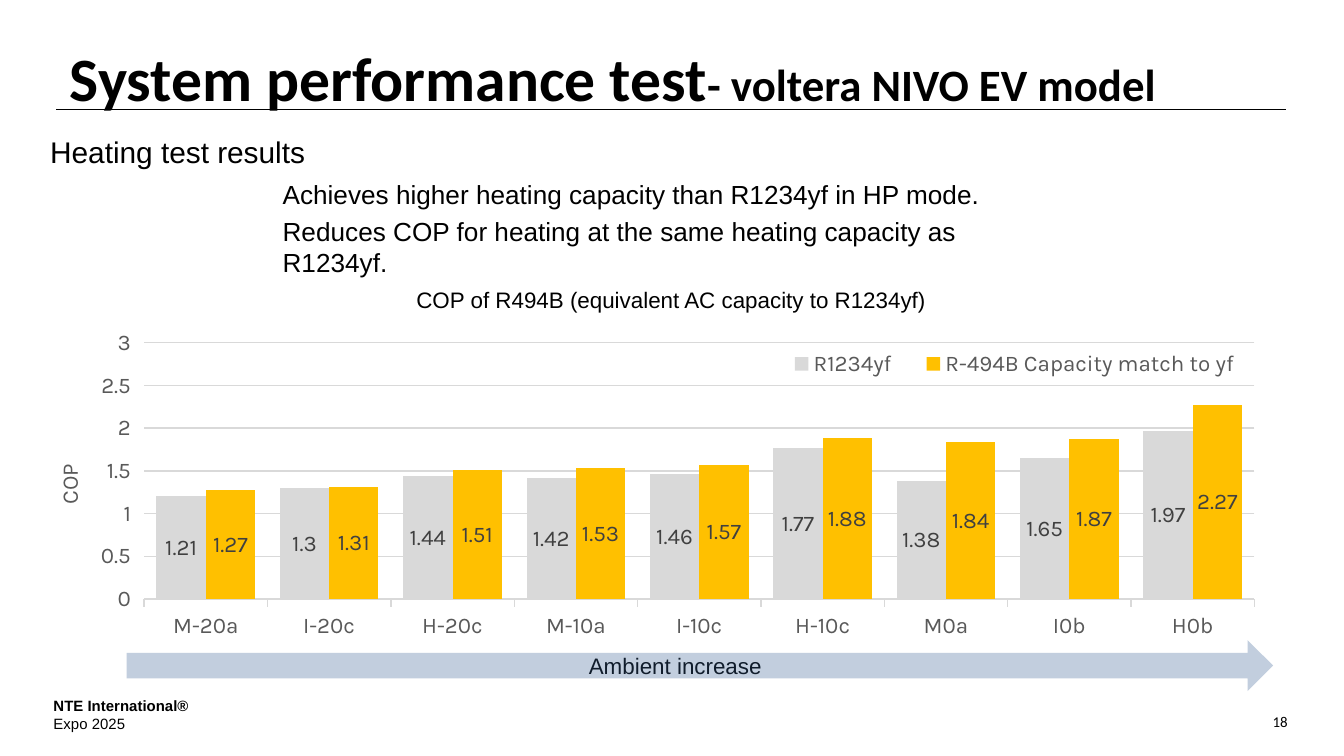
from dataclasses import dataclass

import lxml.etree
import pptx
import pptx.chart.data
import pptx.dml.color
import pptx.enum.chart
import pptx.enum.shapes
import pptx.enum.text
import pptx.oxml.ns
import pptx.util

Pt = pptx.util.Pt
RGBColor = pptx.dml.color.RGBColor
Align = pptx.enum.text.PP_ALIGN
Anchor = pptx.enum.text.MSO_ANCHOR
qn = pptx.oxml.ns.qn

BLACK = RGBColor(0x00, 0x00, 0x00)
AXIS_GRAY = RGBColor(0x59, 0x59, 0x59)
LABEL_GRAY = RGBColor(0x40, 0x40, 0x40)
LIGHT_GRAY = RGBColor(0xD9, 0xD9, 0xD9)
AMBER = RGBColor(0xFF, 0xC0, 0x00)
ARROW_BLUE = RGBColor(0x37, 0x60, 0x92)


@dataclass
class Box:
    left: float
    top: float
    width: float
    height: float

    def emu(self) -> list:
        return [Pt(v) for v in (self.left, self.top, self.width, self.height)]


@dataclass
class Label:
    box: Box
    lines: list
    size: float
    font: str = "Arial"
    align: Align = Align.LEFT
    anchor: Anchor = Anchor.TOP
    inset: bool = True
    after: float = 0


@dataclass
class Series:
    name: str
    color: RGBColor
    values: tuple


def style_font(font, size: float, color: RGBColor, name: str, bold: bool = False) -> None:
    font.size, font.name, font.bold = Pt(size), name, bold
    font.color.rgb = color


def fill_text(shape, label: Label) -> None:
    frame = shape.text_frame
    frame.text = "\n".join(label.lines)
    frame.word_wrap = True
    frame.auto_size = pptx.enum.text.MSO_AUTO_SIZE.NONE
    frame.vertical_anchor = label.anchor
    if not label.inset:
        frame.margin_left = frame.margin_right = frame.margin_top = frame.margin_bottom = 0
    for paragraph in frame.paragraphs:
        paragraph.alignment = label.align
        paragraph.space_before, paragraph.space_after = Pt(0), Pt(label.after)
        for run in paragraph.runs:
            style_font(run.font, label.size, BLACK, label.font)


def add_label(slide, label: Label):
    shape = slide.shapes.add_textbox(*label.box.emu())
    fill_text(shape, label)
    return shape


def move(shape, box: Box) -> None:
    shape.left, shape.top, shape.width, shape.height = box.emu()


def set_layout(parent, index: int, inner: bool, **fractions: float) -> None:
    """Place a chart part by fractions of the chart area."""
    for old in parent.findall(qn("c:layout")):
        parent.remove(old)
    layout = lxml.etree.Element(qn("c:layout"))
    manual = lxml.etree.SubElement(layout, qn("c:manualLayout"))
    settings = {"layoutTarget": "inner"} if inner else {}
    settings.update(xMode="edge", yMode="edge", **fractions)
    for key, value in settings.items():
        lxml.etree.SubElement(manual, qn(f"c:{key}")).set("val", str(value))
    parent.insert(index, layout)


def add_cop_chart(slide, box: Box, categories: list, series: list) -> None:
    data = pptx.chart.data.CategoryChartData()
    data.categories = categories
    for entry in series:
        data.add_series(entry.name, entry.values)
    kind = pptx.enum.chart.XL_CHART_TYPE.COLUMN_CLUSTERED
    chart = slide.shapes.add_chart(kind, *box.emu(), data).chart
    chart.has_title = False
    style_font(chart.font, 12, BLACK, "Karla")

    # Columns with centred values
    plot = chart.plots[0]
    plot.gap_width, plot.overlap, plot.vary_by_categories = 50, 0, False
    for column, entry in zip(plot.series, series):
        column.format.fill.solid()
        column.format.fill.fore_color.rgb = entry.color
        values = column.data_labels
        values.show_value = True
        values.position = pptx.enum.chart.XL_LABEL_POSITION.CENTER
        style_font(values.font, 12, LABEL_GRAY, "Karla")

    # Axes
    for axis in (chart.category_axis, chart.value_axis):
        style_font(axis.tick_labels.font, 12, AXIS_GRAY, "Karla")
        axis.major_tick_mark = pptx.enum.chart.XL_TICK_MARK.OUTSIDE
    cop_axis = chart.value_axis
    cop_axis.minimum_scale, cop_axis.maximum_scale, cop_axis.major_unit = 0, 3, 0.5
    cop_axis.format.line.fill.background()
    for line in (chart.category_axis.format.line, cop_axis.major_gridlines.format.line):
        line.color.rgb, line.width = LIGHT_GRAY, Pt(0.75)
    cop_title = cop_axis.axis_title.text_frame
    cop_title.text = "COP"
    style_font(cop_title.paragraphs[0].runs[0].font, 12, AXIS_GRAY, "Karla")

    # Legend inside the plot, top right
    chart.has_legend = True
    chart.legend.position = pptx.enum.chart.XL_LEGEND_POSITION.TOP
    chart.legend.include_in_layout = True
    style_font(chart.legend.font, 12, AXIS_GRAY, "Karla")
    area = chart.element.find(".//" + qn("c:plotArea"))
    set_layout(area, 0, True, x=0.076, y=0.099, w=0.898, h=0.681)
    legend = chart.element.find(".//" + qn("c:legend"))
    set_layout(legend, 1, False, x=0.58, y=0.11, w=0.4, h=0.09)


def add_arrow(slide, box: Box) -> None:
    arrow = slide.shapes.add_shape(pptx.enum.shapes.MSO_SHAPE.RIGHT_ARROW, *box.emu())
    arrow.shadow.inherit = False
    arrow.fill.solid()
    arrow.fill.fore_color.rgb = ARROW_BLUE
    arrow.line.fill.background()
    color = arrow.element.spPr.find(".//" + qn("a:srgbClr"))
    lxml.etree.SubElement(color, qn("a:alpha")).set("val", "30000")


def add_rule(slide, left: float, right: float, y: float) -> None:
    rule = slide.shapes.add_connector(
        pptx.enum.shapes.MSO_CONNECTOR.STRAIGHT, Pt(left), Pt(y), Pt(right), Pt(y))
    rule.line.color.rgb, rule.line.width = BLACK, Pt(0.5)
    lxml.etree.SubElement(rule.element.spPr, qn("a:effectLst"))


def main() -> None:
    deck = pptx.Presentation()
    deck.slide_width, deck.slide_height = Pt(720), Pt(405)
    slide = deck.slides.add_slide(deck.slide_layouts[1])
    heading, findings = slide.placeholders

    # Title with a smaller second part
    title_box = Box(30.24, 21.6, 658.8, 31.68)
    move(heading, title_box)
    fill_text(heading, Label(title_box, ["System performance test"], 33, "Calibri"))
    heading.text_frame.margin_top = Pt(4)
    title_line = heading.text_frame.paragraphs[0]
    title_line.line_spacing = 0.9
    title_line.add_run().text = "- voltera NIVO EV model"
    for run, size in zip(title_line.runs, (33, 24)):
        style_font(run.font, size, BLACK, "Calibri", bold=True)
    add_rule(slide, 30.24, 689.04, 58.5)

    # Findings
    add_label(slide, Label(Box(26.9, 71.7, 192, 19.44), ["Heating test results"], 16,
                           inset=False, after=4))
    findings_box = Box(151.4, 100.08, 416.88, 43.92)
    move(findings, findings_box)
    fill_text(findings, Label(findings_box, [
        "Achieves higher heating capacity than R1234yf in HP mode.",
        "Reduces COP for heating at the same heating capacity as R1234yf.",
    ], 14, anchor=Anchor.MIDDLE, inset=False, after=3))
    for paragraph in findings.text_frame.paragraphs:
        properties = paragraph._p.get_or_add_pPr()
        properties.set("marL", "0")
        properties.set("indent", "0")
        lxml.etree.SubElement(properties, qn("a:buNone"))

    # Chart
    add_cop_chart(
        slide, Box(26.9, 163.7, 662.4, 201.6),
        ["M-20a", "I-20c", "H-20c", "M-10a", "I-10c", "H-10c", "M0a", "I0b", "H0b"],
        [Series("R1234yf", LIGHT_GRAY,
                (1.21, 1.3, 1.44, 1.42, 1.46, 1.77, 1.38, 1.65, 1.97)),
         Series("R-494B Capacity match to yf", AMBER,
                (1.27, 1.31, 1.51, 1.53, 1.57, 1.88, 1.84, 1.87, 2.27))])
    add_label(slide, Label(Box(211.68, 149.76, 295.92, 21.6),
                           ["COP of R494B (equivalent AC capacity to R1234yf)"], 12,
                           align=Align.CENTER))

    # Ambient arrow
    add_label(slide, Label(Box(286.56, 349.2, 150.48, 14.4), ["Ambient increase"], 12,
                           align=Align.CENTER, anchor=Anchor.MIDDLE, inset=False, after=3))
    add_arrow(slide, Box(67.9, 342.9, 614.16, 27.36))

    # Footer
    footer = add_label(slide, Label(Box(21.6, 369.5, 206.64, 26.64),
                                    ["NTE International®", "Expo 2025"], 8))
    footer.text_frame.paragraphs[0].runs[0].font.bold = True
    add_label(slide, Label(Box(542.16, 378, 154.8, 17.28), ["18"], 8, "Calibri", Align.RIGHT))

    deck.save("out.pptx")


if __name__ == "__main__":
    main()
